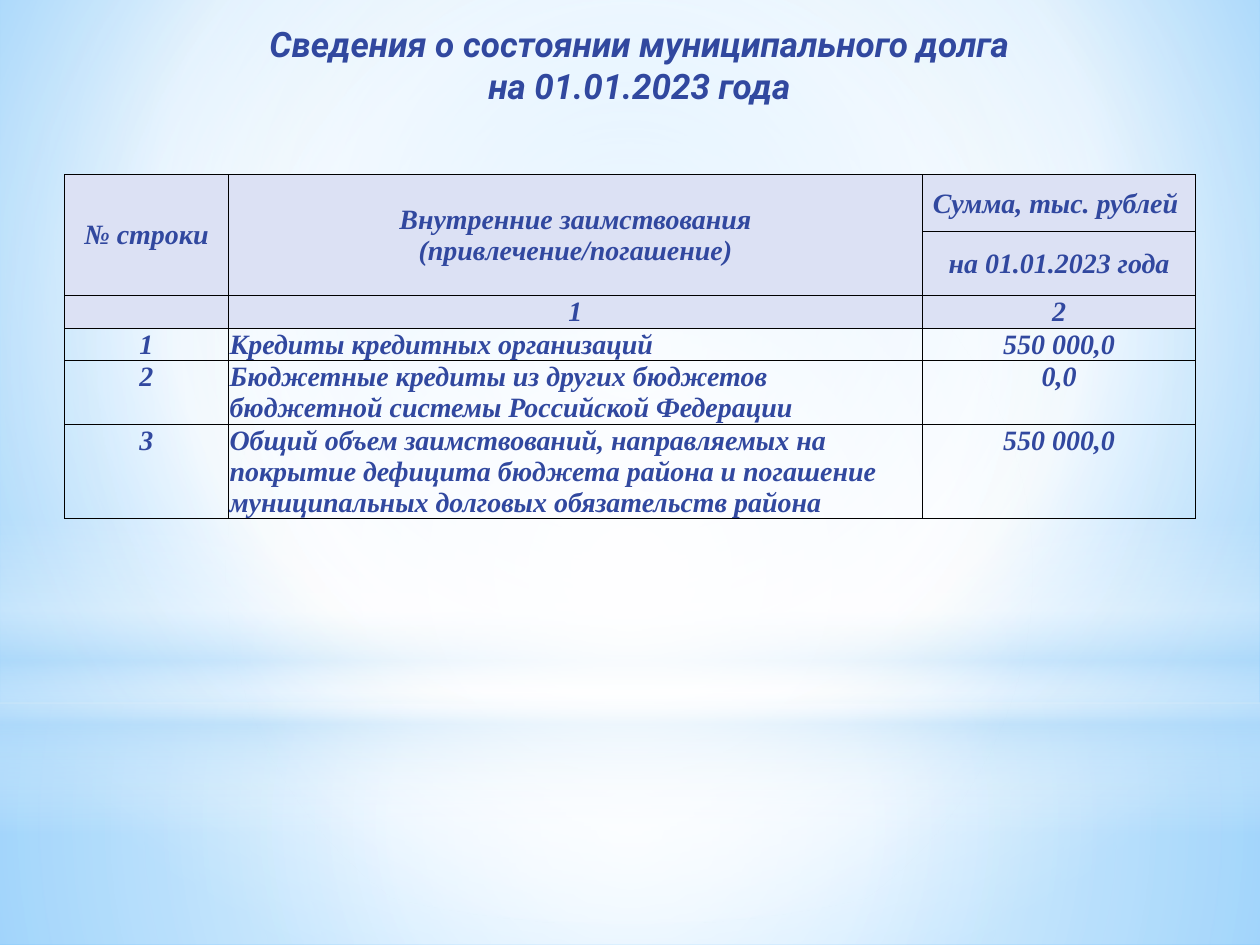
from lxml.etree import SubElement
from pptx import Presentation
from pptx.dml.color import RGBColor
from pptx.enum.shapes import MSO_SHAPE
from pptx.enum.text import MSO_ANCHOR, PP_ALIGN
from pptx.oxml.ns import qn
from pptx.util import Pt

INK = RGBColor(0x31, 0x48, 0x9F)
HEADER = RGBColor(0xDC, 0xE1, 0xF4)
BORDER = RGBColor(0x00, 0x00, 0x00)
WHITE = RGBColor(0xFF, 0xFF, 0xFF)
HAZE = RGBColor(0xB4, 0xDC, 0xFA)
SKY = RGBColor(0x9E, 0xD5, 0xFF)
AZURE = RGBColor(0x5B, 0xB9, 0xFF)

CENTER = (50, 50, 50, 50)
GLOWS = [
    (MSO_SHAPE.RECTANGLE, (0, 401.76, 720, 138.24),
     [(0, WHITE, 91), (37, WHITE, 76), (100, HAZE, 79)], CENTER),
    (MSO_SHAPE.RECTANGLE, (0, 0, 720, 401.76),
     [(0, WHITE, 89), (48, WHITE, 62), (100, HAZE, 79)], CENTER),
    (MSO_SHAPE.RECTANGLE, (0, 296.64, 720, 180),
     [(0, WHITE, 0), (29, WHITE, 30), (45, HAZE, 40),
      (55, WHITE, 26), (65, HAZE, 60), (100, WHITE, 0)], None),
    (MSO_SHAPE.OVAL, (0, 126, 720, 401.76),
     [(0, WHITE, 100), (56, WHITE, 0)], CENTER),
]

COLUMN_WIDTHS = [93.6, 396.6, 156.2]
ROW_HEIGHTS = [32.5, 35.8, 18.9, 18.3, 36.5, 53.7]
HEADER_ROWS = 3
DEBT_ROWS = [
    ("№ строки", "Внутренние заимствования\v(привлечение/погашение)", "Сумма, тыс. рублей "),
    ("", "", "на 01.01.2023 года"),
    ("", "1", "2"),
    ("1", "Кредиты кредитных организаций", "550 000,0"),
    ("2", "Бюджетные кредиты из других бюджетов бюджетной системы Российской Федерации", "0,0"),
    ("3", "Общий объем заимствований, направляемых на покрытие дефицита бюджета района "
          "и погашение муниципальных долговых обязательств района", "550 000,0"),
]


def set_gradient(element, stops, focus):
    """Replace the solid fill of an element by a radial or vertical gradient."""
    solid = next(element.iter(qn("a:solidFill")))
    gradient = solid.makeelement(qn("a:gradFill"), {"rotWithShape": "1"})
    solid.getparent().replace(solid, gradient)
    stop_list = SubElement(gradient, qn("a:gsLst"))
    for position, color, opacity in stops:
        stop = SubElement(stop_list, qn("a:gs"), pos=str(position * 1000))
        tint = SubElement(stop, qn("a:srgbClr"), val=str(color))
        if opacity < 100:
            SubElement(tint, qn("a:alpha"), val=str(opacity * 1000))
    if focus:
        radial = SubElement(gradient, qn("a:path"), {"path": "circle"})
        sides = {side: str(share * 1000) for side, share in zip("ltrb", focus)}
        SubElement(radial, qn("a:fillToRect"), sides)
    else:
        SubElement(gradient, qn("a:lin"), ang="5400000", scaled="0")


def add_glow(slide, outline, box, stops, focus):
    """Add one translucent layer of the backdrop."""
    glow = slide.shapes.add_shape(outline, *map(Pt, box))
    glow.shadow.inherit = False
    glow.line.fill.background()
    glow.fill.solid()
    set_gradient(glow._element, stops, focus)


def style_text(paragraph, font_name, size, alignment):
    """Give a paragraph the bold italic lettering of the slide."""
    paragraph.alignment = alignment
    font = paragraph.font
    font.name, font.size = font_name, Pt(size)
    font.bold = font.italic = True
    font.color.rgb = INK


def place_title(slide):
    """Move the title to the top and bring it in front of the backdrop."""
    title = slide.shapes.title
    title.left, title.top, title.width, title.height = map(Pt, (31, 9.4, 668.9, 85))
    frame = title.text_frame
    frame.text = "Сведения о состоянии муниципального долга\vна 01.01.2023 года"
    frame.vertical_anchor = MSO_ANCHOR.TOP
    style_text(frame.paragraphs[0], "Roboto", 20, PP_ALIGN.CENTER)
    slide.shapes._spTree.append(title._element)


def draw_borders(cell):
    """Draw thin lines on the four sides of a cell."""
    properties = cell._tc.get_or_add_tcPr()
    for index, side in enumerate(("lnL", "lnR", "lnT", "lnB")):
        line = properties.makeelement(qn(f"a:{side}"), {"w": str(Pt(0.5))})
        color = SubElement(SubElement(line, qn("a:solidFill")), qn("a:srgbClr"))
        color.set("val", str(BORDER))
        properties.insert(index, line)


def fill_cell(cell, text, is_header, alignment):
    """Write and format one table cell."""
    cell.text = text
    cell.margin_left = cell.margin_right = cell.margin_top = Pt(0.7)
    cell.margin_bottom = Pt(0)
    paragraph = cell.text_frame.paragraphs[0]
    style_text(paragraph, "Times New Roman", 16, alignment)
    if not text:
        SubElement(paragraph._p, qn("a:endParaRPr"), sz="1600")
    if is_header:
        cell.vertical_anchor = MSO_ANCHOR.MIDDLE
        cell.fill.solid()
        cell.fill.fore_color.rgb = HEADER
    else:
        cell.fill.background()
    draw_borders(cell)


def add_debt_table(slide):
    """Add the table of borrowings."""
    table = slide.shapes.add_table(
        len(DEBT_ROWS), len(COLUMN_WIDTHS), Pt(36.9), Pt(99.8),
        Pt(sum(COLUMN_WIDTHS)), Pt(sum(ROW_HEIGHTS))).table
    table.first_row = table.horz_banding = False
    for column, width in zip(table.columns, COLUMN_WIDTHS):
        column.width = Pt(width)
    for row, height in zip(table.rows, ROW_HEIGHTS):
        row.height = Pt(height)
    for row_index, debt_row in enumerate(DEBT_ROWS):
        is_header = row_index < HEADER_ROWS
        for column_index, text in enumerate(debt_row):
            is_name = column_index == 1 and not is_header
            alignment = PP_ALIGN.LEFT if is_name else PP_ALIGN.CENTER
            fill_cell(table.cell(row_index, column_index), text, is_header, alignment)
    for column_index in (0, 1):
        table.cell(0, column_index).merge(table.cell(1, column_index))


def main():
    """Build the slide and save it."""
    deck = Presentation()
    deck.slide_width, deck.slide_height = Pt(720), Pt(540)
    slide = deck.slides.add_slide(deck.slide_layouts[5])
    slide.background.fill.solid()
    set_gradient(slide._element, [(0, SKY, 100), (60, WHITE, 100), (100, AZURE, 100)],
                 (20, 10, 20, 60))
    for glow in GLOWS:
        add_glow(slide, *glow)
    place_title(slide)
    add_debt_table(slide)
    deck.save("out.pptx")


if __name__ == "__main__":
    main()
